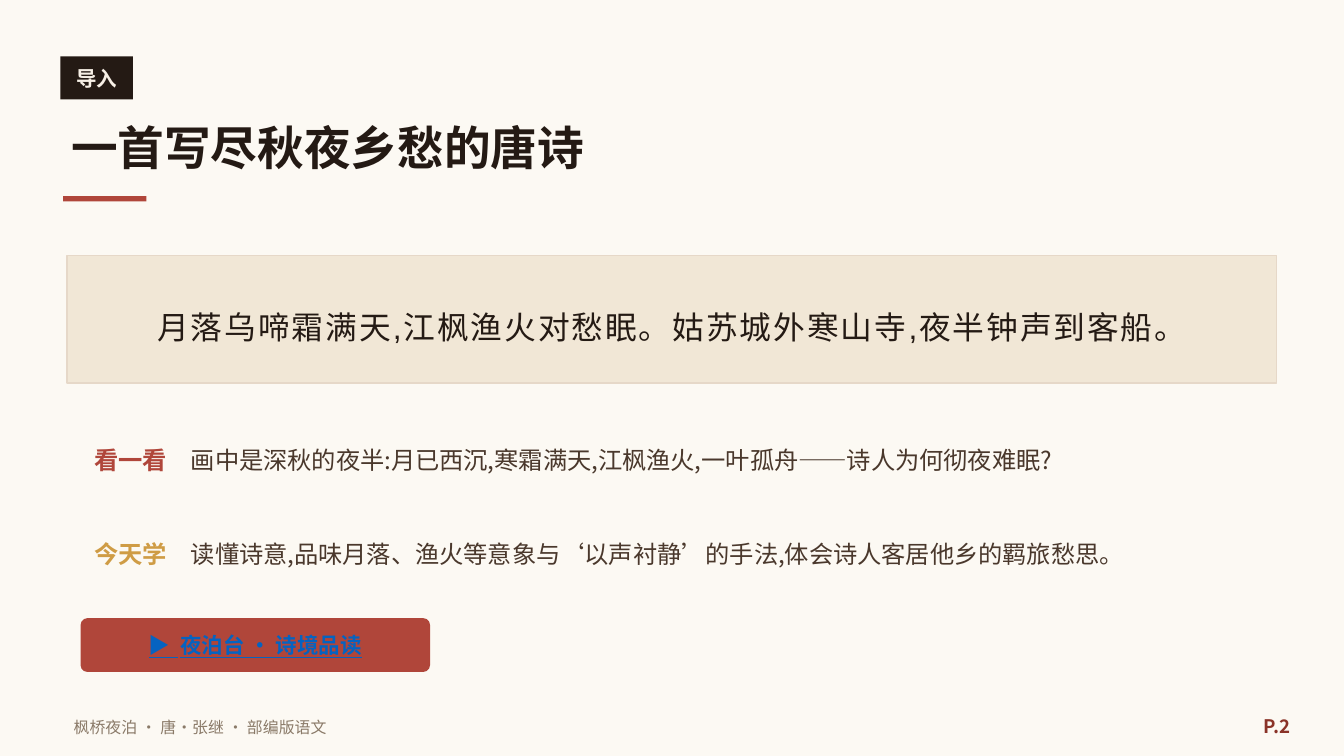
import dataclasses

import pptx
import pptx.dml.color
import pptx.enum.shapes
import pptx.enum.text
import pptx.oxml.ns
import pptx.util
from lxml import etree

SCALE = 4572  # EMU in one px, 200 px to the inch
SHAPES = pptx.enum.shapes.MSO_SHAPE
ALIGN = pptx.enum.text.PP_ALIGN


@dataclasses.dataclass(frozen=True)
class Theme:
    paper: str = "FCF9F3"
    ink: str = "241A14"
    cream: str = "F7F0E6"
    red: str = "B0463A"
    dark_red: str = "8A3328"
    gold: str = "CF9C45"
    sand: str = "F1E7D6"
    sand_edge: str = "E6D8C8"
    brown: str = "4A382C"
    grey: str = "8A7A68"
    link: str = "0563C1"
    font: str = "Noto Sans CJK SC"
    verse_font: str = "Arial"
    title_size: float = 25
    verse_size: float = 17
    body_size: float = 13
    button_size: float = 11.5
    tag_size: float = 11
    page_size: float = 10
    footer_size: float = 8.5


THEME = Theme()


def color(value):
    return pptx.dml.color.RGBColor.from_string(value)


def place(item, box):
    for name, value in zip(("left", "top", "width", "height"), box):
        setattr(item, name, pptx.util.Emu(value * SCALE))


def add_panel(page, box, fill, edge=None, kind=SHAPES.RECTANGLE):
    panel = page.shapes.add_shape(kind, *(value * SCALE for value in box))
    panel.shadow.inherit = False
    panel.fill.solid()
    panel.fill.fore_color.rgb = color(fill)
    if edge:
        panel.line.color.rgb = color(edge)
        panel.line.width = pptx.util.Pt(0.75)
    else:
        panel.line.fill.background()
    return panel


def add_span(para, text, size, ink, font=THEME.font, spacing=0, **formats):
    span = para.add_run()
    span.text = text
    formats = {"name": font, "size": pptx.util.Pt(size), **formats}
    for name, value in formats.items():
        setattr(span.font, name, value)
    span.font.color.rgb = color(ink)
    properties = span._r.get_or_add_rPr()
    if spacing:
        properties.set("spc", str(round(spacing * 100)))
    east_asian = etree.SubElement(properties, pptx.oxml.ns.qn("a:ea"))
    east_asian.set("typeface", THEME.font)


def format_text(item, align=ALIGN.LEFT, leading=None):
    """Prepare the text frame of a text box or placeholder; return its paragraph."""
    formats = {
        "word_wrap": True,
        "auto_size": pptx.enum.text.MSO_AUTO_SIZE.NONE,
        "vertical_anchor": pptx.enum.text.MSO_ANCHOR.MIDDLE,
    }
    for name, value in formats.items():
        setattr(item.text_frame, name, value)
    para = item.text_frame.paragraphs[0]
    para.alignment = align
    para.space_before = pptx.util.Pt(0)
    if leading:
        para.line_spacing = pptx.util.Pt(leading)
    return para


def add_text(page, box, align=ALIGN.LEFT, leading=None):
    item = page.shapes.add_textbox(*(value * SCALE for value in box))
    return format_text(item, align, leading)


def draw_header(page, box):
    left, top, width, height = box
    # Section tag
    add_panel(page, (left + 4, top + 2, 108, 64), THEME.ink)
    para = add_text(page, (left + 4, top, 108, 68), ALIGN.CENTER)
    add_span(para, "导入", THEME.tag_size, THEME.cream, bold=True)
    # Title and its rule
    title = page.shapes.title
    place(title, (left, top + 74, width, 124))
    add_span(format_text(title), "一首写尽秋夜乡愁的唐诗",
             THEME.title_size, THEME.ink, bold=True)
    add_panel(page, (left + 8, top + height - 8, 124, 8), THEME.red)


def draw_verse(page, box):
    left, top, width, height = box
    add_panel(page, box, THEME.sand, THEME.sand_edge)
    para = add_text(page, (left + 40, top, width - 80, height), ALIGN.CENTER, 28)
    add_span(para, "月落乌啼霜满天,江枫渔火对愁眠。姑苏城外寒山寺,夜半钟声到客船。",
             THEME.verse_size, THEME.ink, THEME.verse_font, spacing=1)


def draw_prompts(page, box):
    left, top, width, height = box
    prompts = (
        ("看一看", THEME.red,
         "画中是深秋的夜半:月已西沉,寒霜满天,江枫渔火,一叶孤舟——诗人为何彻夜难眠?"),
        ("今天学", THEME.gold,
         "读懂诗意,品味月落、渔火等意象与‘以声衬静’的手法,体会诗人客居他乡的羁旅愁思。"),
    )
    row_height, step = 120, height - 120
    for row, (label, ink, sentence) in enumerate(prompts):
        item = page.placeholders[row + 1]
        place(item, (left, top + row * step, width, row_height))
        para = format_text(item, leading=19)
        properties = para._p.get_or_add_pPr()
        properties.set("marL", "0")
        properties.set("indent", "0")
        etree.SubElement(properties, pptx.oxml.ns.qn("a:buNone"))
        add_span(para, label + "　", THEME.body_size, ink, bold=True)
        add_span(para, sentence, THEME.body_size, THEME.brown, bold=False)


def draw_button(page, box):
    left, top, width, height = box
    button = add_panel(page, box, THEME.red, kind=SHAPES.ROUNDED_RECTANGLE)
    button.adjustments[0] = 0.125
    para = add_text(page, (left, top - 2, width, height + 4), ALIGN.CENTER)
    for text, spacing in (("▶ ", 1.3), ("夜泊台 · 诗境品读", 0)):
        add_span(para, text, THEME.button_size, THEME.link,
                 spacing=spacing, bold=True, underline=True)


def draw_footer(page, box):
    left, top, width, height = box
    para = add_text(page, (left, top + 4, 1200, height - 4))
    add_span(para, "枫桥夜泊 · 唐·张继 · 部编版语文", THEME.footer_size, THEME.grey)
    para = add_text(page, (left + width - 120, top, 120, height), ALIGN.RIGHT)
    add_span(para, "P.2", THEME.page_size, THEME.dark_red, bold=True)


def main():
    deck = pptx.Presentation()
    deck.slide_width = pptx.util.Emu(2000 * SCALE)
    deck.slide_height = pptx.util.Emu(1125 * SCALE)
    page = deck.slides.add_slide(deck.slide_layouts.get_by_name("Two Content"))
    page.background.fill.solid()
    page.background.fill.fore_color.rgb = color(THEME.paper)
    draw_header(page, (86, 82, 1800, 218))
    draw_verse(page, (100, 380, 1800, 190))
    draw_prompts(page, (120, 620, 1760, 260))
    draw_button(page, (120, 920, 520, 80))
    draw_footer(page, (90, 1048, 1850, 64))
    deck.save("out.pptx")


if __name__ == "__main__":
    main()
